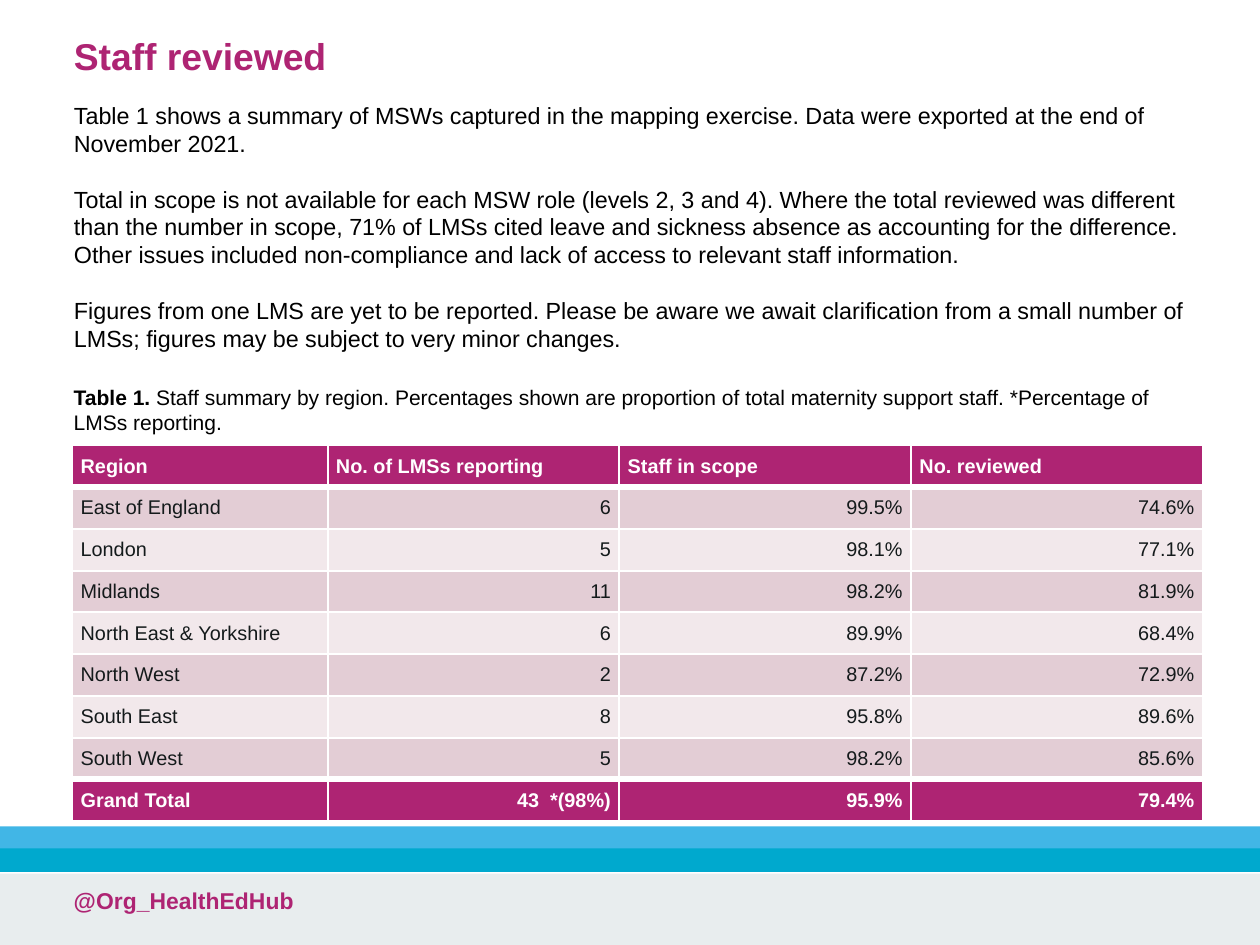
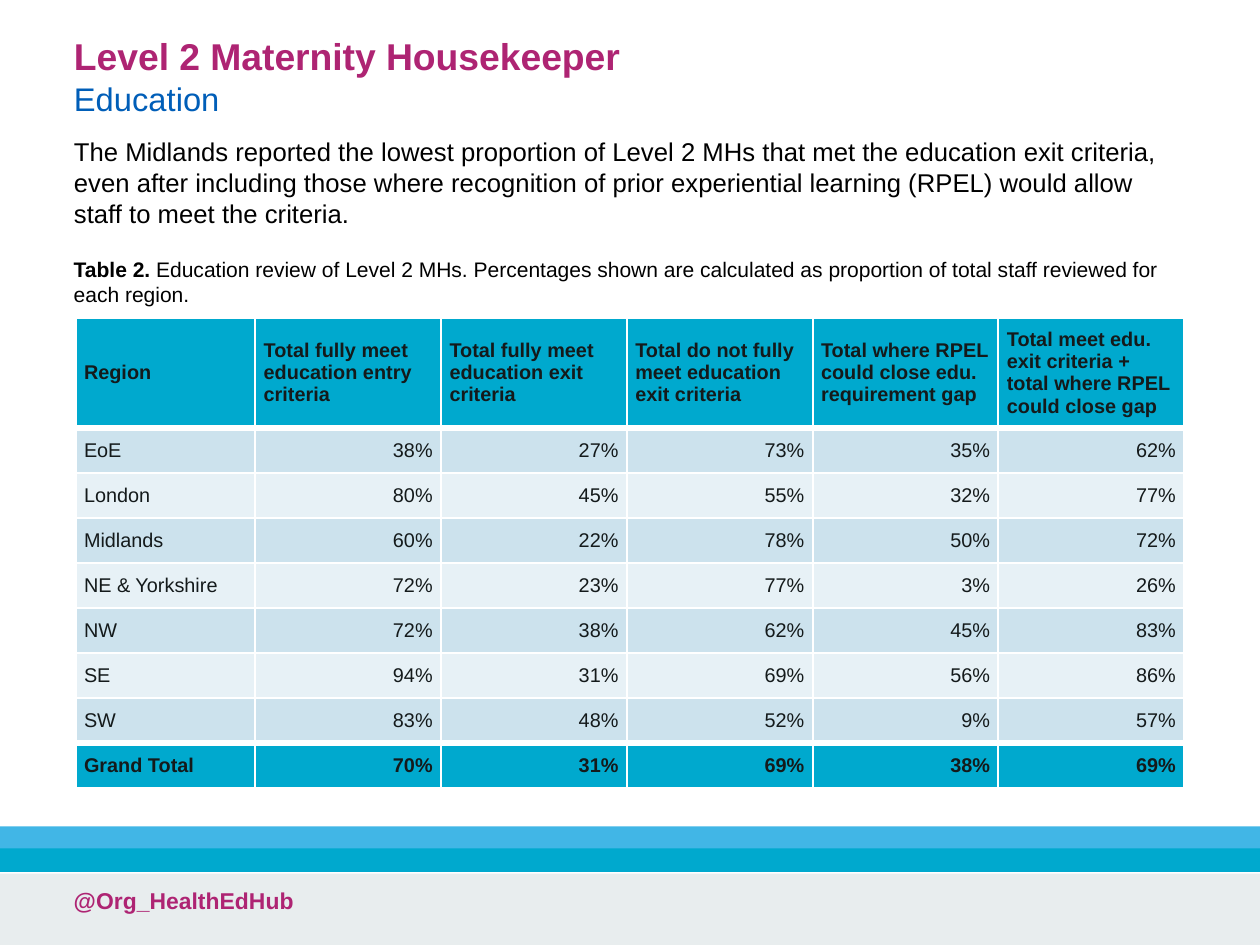
from dataclasses import dataclass

from lxml import etree
from pptx import Presentation
from pptx.dml.color import RGBColor
from pptx.enum import shapes, text
from pptx.oxml import ns
from pptx.util import Inches, Pt

FONT = "Arial"
LEFT, WIDTH = 0.34, 6.81
COLORS = {
    "magenta": "AE2473", "rose": "E3CDD5", "pale rose": "F2E8EB",
    "cyan": "00A9CE", "ice": "CCE2ED", "pale ice": "E7F1F6",
    "sky": "41B6E6", "blue": "005EB8", "grey": "E8EDEE",
    "ink": "141A1B", "black": "000000", "white": "FFFFFF",
}


@dataclass(frozen=True)
class Run:
    text: str
    size: float
    color: str = "black"
    bold: bool = False


@dataclass(frozen=True)
class Band:
    top: float
    height: float
    color: str


@dataclass(frozen=True)
class TableSpec:
    """A table whose columns after the first, and rows after the header, are equal."""
    left: float
    top: float
    width: float
    height: float
    first_width: float
    header_height: float
    accent: str
    accent_text: str
    stripes: tuple[str, str]
    rows: list[list[str]]


@dataclass(frozen=True)
class Page:
    title: list[Run]
    title_height: float
    body: list[str]
    body_top: float
    body_height: float
    body_size: float
    label: str
    caption: str
    caption_top: float
    table: TableSpec


BANDS = [Band(5.2, 0.43, "grey"), Band(4.92, 0.14, "sky"), Band(5.05, 0.14, "cyan")]

PAGES = [
    Page(
        title=[Run("Staff reviewed", 16, "magenta", True)],
        title_height=0.37,
        body=[
            "Table 1 shows a summary of MSWs captured in the mapping exercise. Data were "
            "exported at the end of November 2021.",
            "Total in scope is not available for each MSW role (levels 2, 3 and 4). Where the "
            "total reviewed was different than the number in scope, 71% of LMSs cited leave and "
            "sickness absence as accounting for the difference. Other issues included "
            "non-compliance and lack of access to relevant staff information.",
            "Figures from one LMS are yet to be reported. Please be aware we await clarification "
            "from a small number of LMSs; figures may be subject to very minor changes.",
        ],
        body_top=0.55, body_height=1.77, body_size=10,
        label="Table 1. ",
        caption="Staff summary by region. Percentages shown are proportion of total maternity "
                "support staff. *Percentage of LMSs reporting.",
        caption_top=2.24,
        table=TableSpec(
            0.43, 2.65, 6.73, 2.24, 1.52, 0.25,
            "magenta", "white", ("rose", "pale rose"),
            [
                ["Region", "No. of LMSs reporting", "Staff in scope", "No. reviewed"],
                ["East of England", "6", "99.5%", "74.6%"],
                ["London", "5", "98.1%", "77.1%"],
                ["Midlands", "11", "98.2%", "81.9%"],
                ["North East & Yorkshire", "6", "89.9%", "68.4%"],
                ["North West", "2", "87.2%", "72.9%"],
                ["South East", "8", "95.8%", "89.6%"],
                ["South West", "5", "98.2%", "85.6%"],
                ["Grand Total", "43  *(98%)", "95.9%", "79.4%"],
            ],
        ),
    ),
    Page(
        title=[Run("Level 2 Maternity Housekeeper", 16, "magenta", True),
               Run("Education", 14, "blue")],
        title_height=0.61,
        body=[
            "The Midlands reported the lowest proportion of Level 2 MHs that met the education "
            "exit criteria, even after including those where recognition of prior experiential "
            "learning (RPEL) would allow staff to meet the criteria.",
        ],
        body_top=0.76, body_height=0.72, body_size=11,
        label="Table 2. ",
        caption="Education review of Level 2 MHs. Percentages shown are calculated as proportion "
                "of total staff reviewed for each region.",
        caption_top=1.48,
        table=TableSpec(
            0.45, 1.89, 6.6, 2.8, 1.07, 0.66,
            "cyan", "ink", ("ice", "pale ice"),
            [
                ["Region", "Total fully meet education entry criteria",
                 "Total fully meet education exit criteria",
                 "Total do not fully meet education exit criteria",
                 "Total where RPEL could close edu. requirement gap",
                 "Total meet edu. exit criteria + total where RPEL could close gap"],
                ["EoE", "38%", "27%", "73%", "35%", "62%"],
                ["London", "80%", "45%", "55%", "32%", "77%"],
                ["Midlands", "60%", "22%", "78%", "50%", "72%"],
                ["NE & Yorkshire", "72%", "23%", "77%", "3%", "26%"],
                ["NW", "72%", "38%", "62%", "45%", "83%"],
                ["SE", "94%", "31%", "69%", "56%", "86%"],
                ["SW", "83%", "48%", "52%", "9%", "57%"],
                ["Grand Total", "70%", "31%", "69%", "38%", "69%"],
            ],
        ),
    ),
]


def rgb(name: str) -> RGBColor:
    return RGBColor.from_string(COLORS[name])


def write(tf, paragraphs: list[list[Run]], *, align=text.PP_ALIGN.LEFT,
          leading: float | None = 1.2, gap: float = 0) -> None:
    """Fill a text frame; leading is a multiple of the size, gap is in points."""
    tf.word_wrap = True
    for i, runs in enumerate(paragraphs):
        p = tf.paragraphs[0] if i == 0 else tf.add_paragraph()
        p.alignment = align
        p.space_before = Pt(gap if i else 0)
        p.space_after = Pt(0)
        if leading:
            p.line_spacing = Pt(leading * runs[0].size)
        pPr = p._p.get_or_add_pPr()
        pPr.set("marL", "0")
        pPr.set("indent", "0")
        etree.SubElement(pPr, ns.qn("a:buNone"))
        for run in runs:
            r = p.add_run()
            r.text = run.text
            r.font.name = FONT
            r.font.size = Pt(run.size)
            r.font.bold = run.bold
            r.font.color.rgb = rgb(run.color)


def place(sp, top: float, height: float) -> None:
    """Put a text shape in the common column, anchored at its top."""
    sp.left, sp.top = Inches(LEFT), Inches(top)
    sp.width, sp.height = Inches(WIDTH), Inches(height)
    sp.text_frame.auto_size = text.MSO_AUTO_SIZE.NONE
    sp.text_frame.vertical_anchor = text.MSO_ANCHOR.TOP


def add_footer_to_master(prs, s) -> None:
    """Build the bands and the handle on a slide, then move them to the master."""
    footer = []
    for band in BANDS:
        sp = s.shapes.add_shape(shapes.MSO_SHAPE.RECTANGLE, 0, Inches(band.top),
                                prs.slide_width, Inches(band.height))
        sp.shadow.inherit = False
        sp.fill.solid()
        sp.fill.fore_color.rgb = rgb(band.color)
        sp.line.fill.background()
        footer.append(sp)
    handle = s.shapes.add_textbox(Inches(LEFT), Inches(5.23), Inches(4.38), Inches(0.4))
    write(handle.text_frame, [[Run("@Org_HealthEdHub", 9.8, "magenta", True)]])
    footer.append(handle)
    for i, sp in enumerate(footer):
        sp._element.nvSpPr.cNvPr.set("id", str(100 + i))
        prs.slide_master.shapes._spTree.append(sp._element)


def set_borders(cell, top: float, bottom: float) -> None:
    tcPr = cell._tc.get_or_add_tcPr()
    for i, (side, width) in enumerate(zip("LRTB", (1, 1, top, bottom))):
        ln = etree.Element(ns.qn(f"a:ln{side}"), w=str(Pt(width)))
        fill = etree.SubElement(ln, ns.qn("a:solidFill"))
        etree.SubElement(fill, ns.qn("a:srgbClr"), val=COLORS["white"])
        tcPr.insert(i, ln)


def add_table(s, spec: TableSpec) -> None:
    last, last_column = len(spec.rows) - 1, len(spec.rows[0]) - 1
    table = s.shapes.add_table(last + 1, last_column + 1, Inches(spec.left), Inches(spec.top),
                               Inches(spec.width), Inches(spec.height)).table
    column_width = (spec.width - spec.first_width) / last_column
    row_height = (spec.height - spec.header_height) / last
    for j, column in enumerate(table.columns):
        column.width = Inches(column_width if j else spec.first_width)
    for i, values in enumerate(spec.rows):
        table.rows[i].height = Inches(row_height if i else spec.header_height)
        strong = i in (0, last)
        fill = spec.accent if strong else spec.stripes[(i - 1) % 2]
        color = spec.accent_text if strong else "ink"
        for j, value in enumerate(values):
            cell = table.cell(i, j)
            cell.fill.solid()
            cell.fill.fore_color.rgb = rgb(fill)
            cell.vertical_anchor = text.MSO_ANCHOR.MIDDLE
            cell.margin_left = cell.margin_right = Inches(0.05)
            cell.margin_top = cell.margin_bottom = Inches(0.05)
            align = text.PP_ALIGN.RIGHT if i and j else text.PP_ALIGN.LEFT
            write(cell.text_frame, [[Run(value, 8.5, color, strong)]], align=align, leading=None)
            set_borders(cell, top=3 if i in (1, last) else 1,
                        bottom=3 if i in (0, last - 1) else 1)


def add_page(s, page: Page) -> None:
    title, body = s.shapes.title, s.placeholders[1]
    place(title, 0.15, page.title_height)
    write(title.text_frame, [[run] for run in page.title])
    place(body, page.body_top, page.body_height)
    write(body.text_frame, [[Run(t, page.body_size)] for t in page.body], gap=12)
    caption = s.shapes.add_textbox(0, 0, 0, 0)
    place(caption, page.caption_top, 0.4)
    write(caption.text_frame, [[Run(page.label, 9, bold=True), Run(page.caption, 9)]])
    add_table(s, page.table)


def main() -> None:
    prs = Presentation()
    prs.slide_width = Inches(7.5)
    prs.slide_height = prs.slide_width * 3 // 4
    slides = [prs.slides.add_slide(prs.slide_layouts[1]) for _ in PAGES]
    add_footer_to_master(prs, slides[0])
    for s, page in zip(slides, PAGES):
        add_page(s, page)
    prs.save("out.pptx")


if __name__ == "__main__":
    main()
